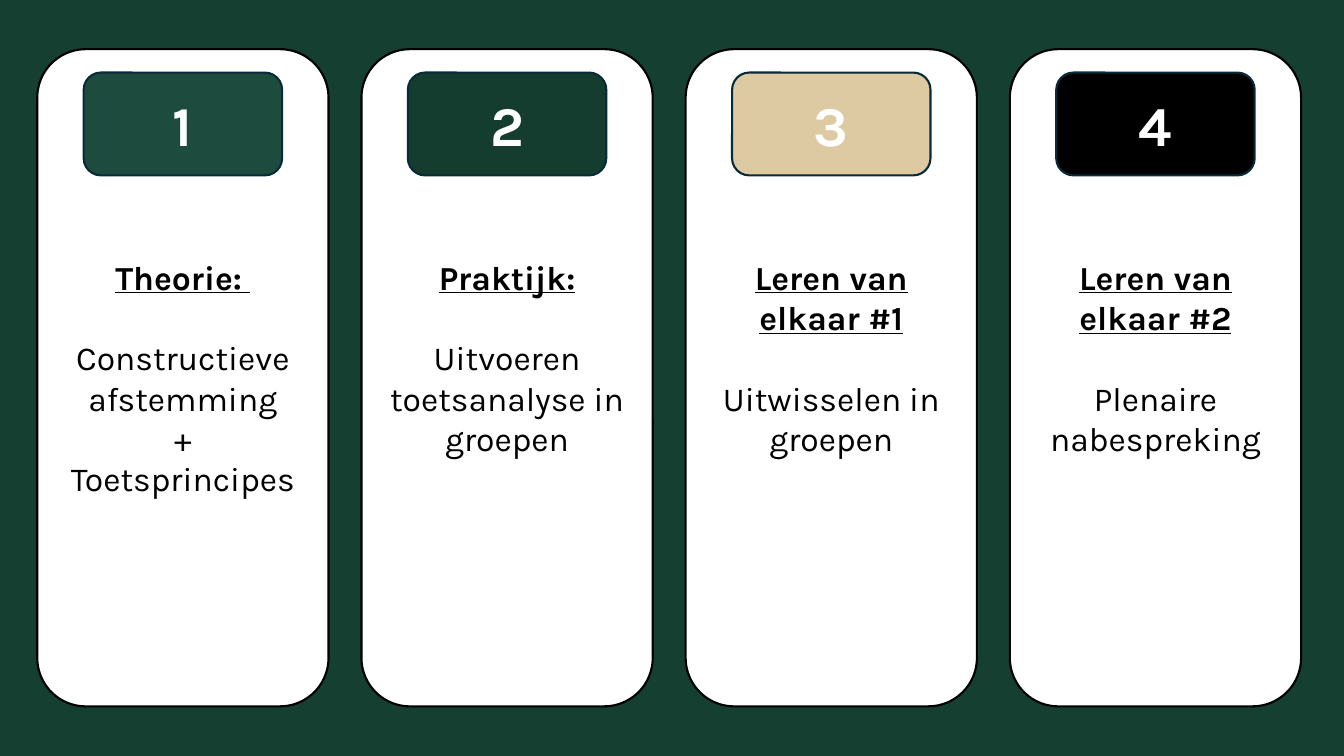
from dataclasses import dataclass

from pptx import Presentation
from pptx.dml.color import RGBColor
from pptx.enum.shapes import MSO_SHAPE
from pptx.enum.text import MSO_ANCHOR, PP_ALIGN
from pptx.shapes.autoshape import Shape
from pptx.slide import Slide
from pptx.text.text import _Paragraph
from pptx.util import Cm, Length, Pt


@dataclass(frozen=True)
class Theme:
    font: str = "Karla"
    background: str = "143F31"
    card: str = "FFFFFF"
    card_line: str = "000000"
    badge_line: str = "092A39"
    text: str = "000000"
    number: str = "FFFFFF"
    text_size: Length = Pt(24)
    number_size: Length = Pt(40)
    title_gap: Length = Pt(28.5)
    line_width: Length = Pt(1.5)


@dataclass(frozen=True)
class Step:
    title: str
    lines: tuple[str, ...]
    badge_fill: str


THEME = Theme()
STEPS = (
    Step("Theorie: ", ("Constructieve afstemming", "+", "Toetsprincipes"), "1D4C3E"),
    Step("Praktijk:", ("Uitvoeren toetsanalyse in groepen",), "143D2F"),
    Step("Leren van elkaar #1", ("Uitwisselen in groepen",), "DECAA2"),
    Step("Leren van elkaar #2", ("Plenaire nabespreking",), "000000"),
)

CARD_LEFT, CARD_TOP = Cm(0.94), Cm(1.24)
CARD_WIDTH, CARD_HEIGHT = Cm(7.34), Cm(16.56)
CARD_PITCH = Cm(8.17)
CARD_TEXT_TOP = Cm(4.88)
BADGE_TOP = Cm(1.83)
BADGE_WIDTH, BADGE_HEIGHT = Cm(5), Cm(2.59)


def add_box(slide: Slide, left: int, top: int, width: int, height: int,
            fill: str, line: str) -> Shape:
    sp = slide.shapes.add_shape(MSO_SHAPE.ROUNDED_RECTANGLE, left, top, width, height)
    sp.shadow.inherit = False
    sp.fill.solid()
    sp.fill.fore_color.rgb = RGBColor.from_string(fill)
    sp.line.color.rgb = RGBColor.from_string(line)
    sp.line.width = THEME.line_width
    sp.text_frame.word_wrap = True
    return sp


def write(p: _Paragraph, text: str, size: Length, color: str,
          bold: bool = False, underline: bool = False) -> None:
    p.text = text
    p.alignment = PP_ALIGN.CENTER
    font = p.runs[0].font
    font.name = THEME.font
    font.size = size
    font.bold = bold
    font.underline = underline
    font.color.rgb = RGBColor.from_string(color)


def add_card(slide: Slide, left: int, step: Step) -> None:
    sp = add_box(slide, left, CARD_TOP, CARD_WIDTH, CARD_HEIGHT,
                 THEME.card, THEME.card_line)
    tf = sp.text_frame
    tf.vertical_anchor = MSO_ANCHOR.TOP
    tf.margin_top = CARD_TEXT_TOP
    write(tf.paragraphs[0], step.title, THEME.text_size, THEME.text,
          bold=True, underline=True)
    for i, line in enumerate(step.lines):
        p = tf.add_paragraph()
        write(p, line, THEME.text_size, THEME.text)
        if i == 0:
            p.space_before = THEME.title_gap


def add_badge(slide: Slide, card_left: int, number: int, fill: str) -> None:
    left = card_left + (CARD_WIDTH - BADGE_WIDTH) // 2
    sp = add_box(slide, left, BADGE_TOP, BADGE_WIDTH, BADGE_HEIGHT,
                 fill, THEME.badge_line)
    tf = sp.text_frame
    tf.vertical_anchor = MSO_ANCHOR.MIDDLE
    write(tf.paragraphs[0], str(number), THEME.number_size, THEME.number, bold=True)


def main() -> None:
    prs = Presentation()
    prs.slide_width, prs.slide_height = Cm(33.87), Cm(19.05)
    slide = prs.slides.add_slide(prs.slide_layouts[6])
    slide.background.fill.solid()
    slide.background.fill.fore_color.rgb = RGBColor.from_string(THEME.background)
    for i, step in enumerate(STEPS):
        left = CARD_LEFT + i * CARD_PITCH
        add_card(slide, left, step)
        add_badge(slide, left, i + 1, step.badge_fill)
    prs.save("out.pptx")


if __name__ == "__main__":
    main()
